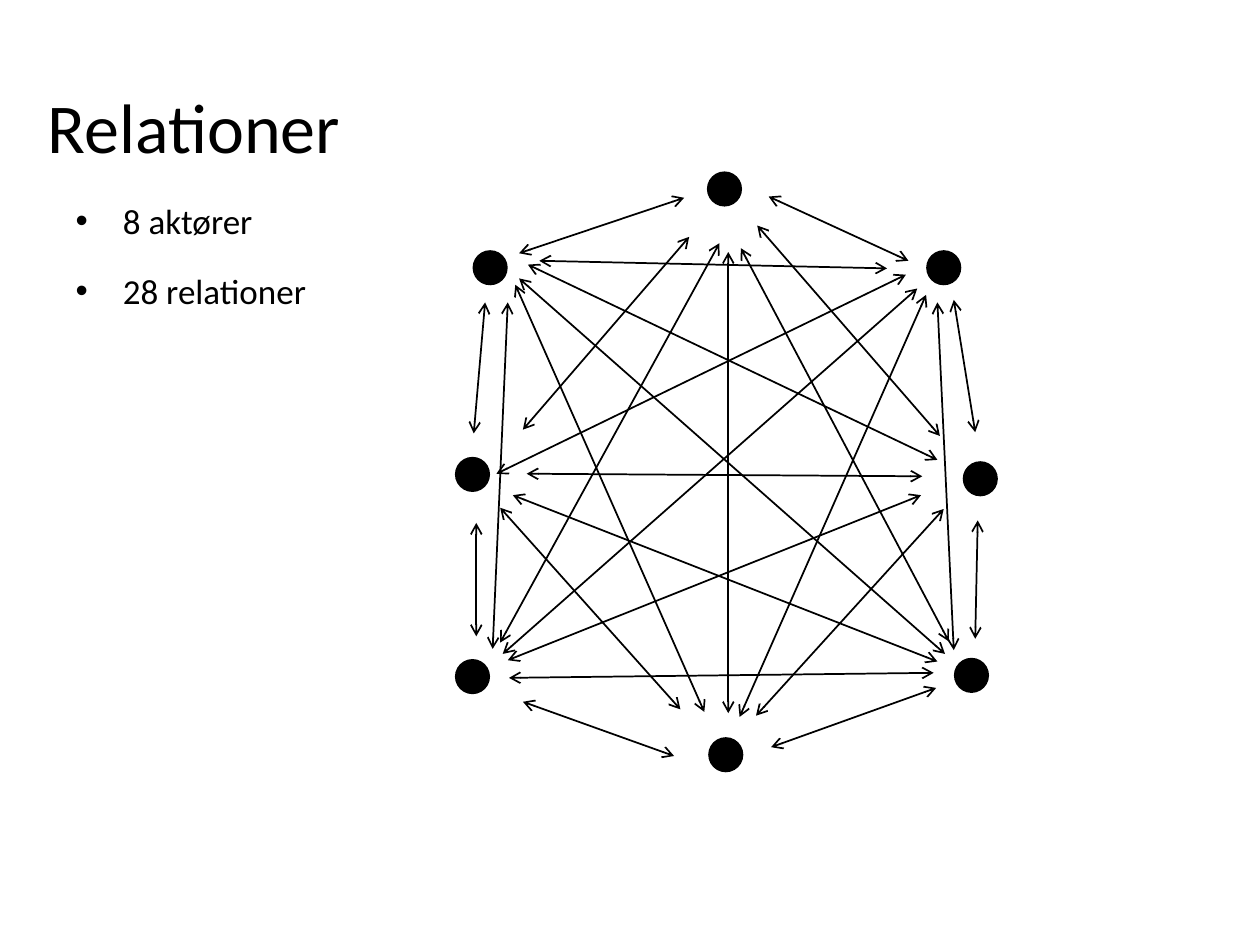
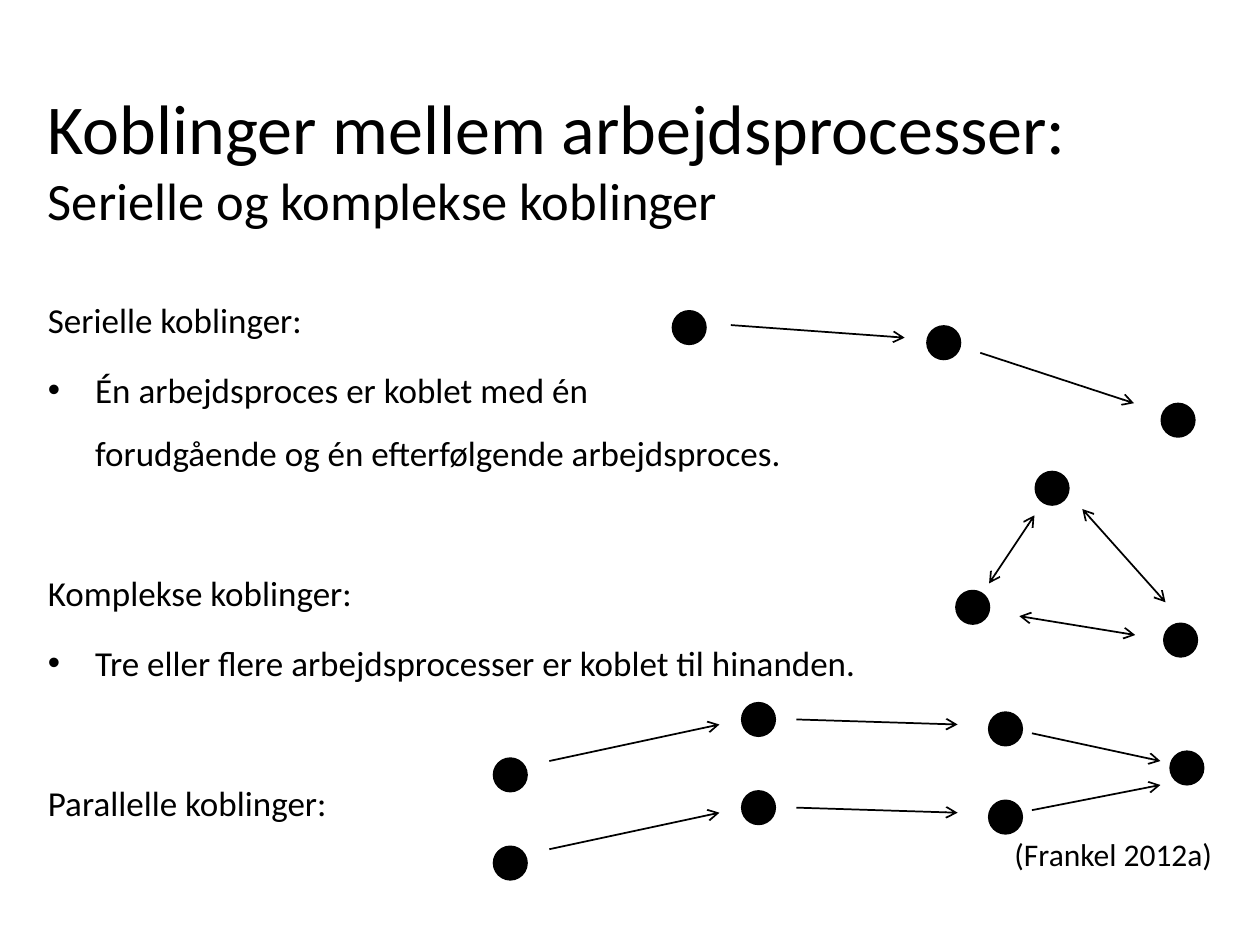
"""Builds two slides on relations between actors and couplings between work processes."""
from copy import deepcopy
from dataclasses import dataclass

from pptx import Presentation
from pptx.dml.color import RGBColor
from pptx.enum.shapes import MSO_AUTO_SHAPE_TYPE as ShapeType, MSO_CONNECTOR as ConnectorType
from pptx.enum.text import MSO_ANCHOR as Anchor, MSO_AUTO_SIZE as AutoSize, PP_ALIGN as Align
from pptx.oxml.ns import qn
from pptx.oxml.xmlchemy import OxmlElement
from pptx.util import Emu, Inches, Pt

COLUMNS, ROWS = 100, 75
WIDTH, HEIGHT = Inches(10), Inches(7.5)
INK = "000000"
FONT = "Calibri"
DOT = 2.65
LINE_WIDTH = Pt(1)
BULLET_INDENT = 3.75
PARAGRAPH_GAP = 4
SECTION_GAP = 44
TEXT_LEFT = 2.8
TRACK_GAP = 7

Point = tuple[float, float]


@dataclass(frozen=True)
class Arrow:
    start: Point
    end: Point
    both_ways: bool = True


@dataclass(frozen=True)
class Network:
    dots: list[Point]
    arrows: list[Arrow]


@dataclass(frozen=True)
class Entry:
    text: str
    bullet: bool = False
    gap: float = PARAGRAPH_GAP


@dataclass(frozen=True)
class Box:
    left: float
    top: float
    width: float
    height: float


def column(value: float) -> Emu:
    return Emu(round(WIDTH * value / COLUMNS))


def row(value: float) -> Emu:
    return Emu(round(HEIGHT * value / ROWS))


def color(hex_code: str) -> RGBColor:
    return RGBColor.from_string(hex_code)


def lower(point: Point) -> Point:
    return point[0], point[1] + TRACK_GAP


def one_way(start: Point, end: Point) -> Arrow:
    return Arrow(start, end, both_ways=False)


def place(shape, box: Box) -> None:
    shape.left, shape.top = column(box.left), row(box.top)
    shape.width, shape.height = column(box.width), row(box.height)


def prepare_frame(frame) -> None:
    frame.word_wrap = True
    frame.auto_size = AutoSize.NONE
    frame.vertical_anchor = Anchor.TOP


def write(paragraph, text: str, *, sizes: tuple[int, ...] = (20,), align=Align.LEFT,
          spacing: float = 1.0, gap: float = 0, bullet: bool = False) -> None:
    paragraph.alignment = align
    paragraph.line_spacing = spacing
    paragraph.space_before = Pt(gap)
    properties = paragraph._p.get_or_add_pPr()
    indent = column(BULLET_INDENT) if bullet else 0
    properties.set("marL", str(indent))
    properties.set("indent", str(-indent))
    mark = OxmlElement("a:buChar" if bullet else "a:buNone")
    if bullet:
        mark.set("char", "•")
    properties.append(mark)
    for index, line in enumerate(text.split("\n")):
        if index:
            paragraph.add_line_break()
            line_break = paragraph._p.findall(qn("a:br"))[-1]
            line_break.insert(0, deepcopy(run._r.get_or_add_rPr()))
        run = paragraph.add_run()
        run.text = line
        run.font.name = FONT
        run.font.size = Pt(sizes[min(index, len(sizes) - 1)])
        run.font.color.rgb = color(INK)


def add_text_slide(presentation, title: str, title_box: Box, entries: list[Entry], body_box: Box):
    slide = presentation.slides.add_slide(presentation.slide_layouts[1])
    heading, body = slide.shapes.title, slide.placeholders[1]
    for shape, box in ((heading, title_box), (body, body_box)):
        place(shape, box)
        prepare_frame(shape.text_frame)
    write(heading.text_frame.paragraphs[0], title, sizes=(40, 30))
    frame = body.text_frame
    for index, entry in enumerate(entries):
        paragraph = frame.add_paragraph() if index else frame.paragraphs[0]
        write(paragraph, entry.text, spacing=1.5, gap=entry.gap, bullet=entry.bullet)
    return slide


def add_caption(slide, text: str, box: Box) -> None:
    shape = slide.shapes.add_textbox(0, 0, 0, 0)
    place(shape, box)
    prepare_frame(shape.text_frame)
    write(shape.text_frame.paragraphs[0], text, sizes=(18,), align=Align.RIGHT)


def add_dot(shapes, center: Point) -> None:
    dot = shapes.add_shape(ShapeType.FLOWCHART_CONNECTOR, column(center[0] - DOT / 2),
                           row(center[1] - DOT / 2), column(DOT), row(DOT))
    dot.shadow.inherit = False
    dot.fill.solid()
    dot.fill.fore_color.rgb = color(INK)
    dot.line.color.rgb = color(INK)
    dot.line.width = LINE_WIDTH


def add_arrow(shapes, arrow: Arrow) -> None:
    connector = shapes.add_connector(ConnectorType.STRAIGHT, column(arrow.start[0]), row(arrow.start[1]),
                                     column(arrow.end[0]), row(arrow.end[1]))
    connector.line.color.rgb = color(INK)
    connector.line.width = LINE_WIDTH
    for tag in ("a:headEnd", "a:tailEnd") if arrow.both_ways else ("a:tailEnd",):
        tip = OxmlElement(tag)
        tip.set("type", "arrow")
        connector.line._get_or_add_ln().append(tip)
    connector._element.spPr.append(OxmlElement("a:effectLst"))


def add_network(slide, network: Network) -> None:
    shapes = slide.shapes.add_group_shape().shapes
    for center in network.dots:
        add_dot(shapes, center)
    for arrow in network.arrows:
        add_arrow(shapes, arrow)


ACTORS = Network(
    dots=[(57.5, 15), (74.9, 21.25), (77.8, 38), (77.1, 53.6),
          (57.6, 59.9), (37.5, 53.7), (37.5, 37.65), (38.9, 21.25)],
    arrows=[
        Arrow((41.8, 37.6), (73.2, 37.8)), Arrow((41.5, 34.1), (54.7, 18.8)),
        Arrow((60.1, 17.9), (74.6, 34.6)), Arrow((39.7, 40.3), (54, 56.3)),
        Arrow((74.9, 40.4), (60, 56.8)), Arrow((37.8, 41.5), (37.8, 50.5)),
        Arrow((53.5, 60), (41.5, 55.7)), Arrow((39.7, 51), (57.1, 19.3)),
        Arrow((40.3, 52.4), (73.1, 39.3)), Arrow((77.6, 41.3), (77.4, 50.7)),
        Arrow((74.3, 54.6), (61.2, 59.3)), Arrow((74.4, 52.5), (40.7, 39.3)),
        Arrow((75.3, 50.9), (58.8, 19.7)), Arrow((38.5, 24), (37.6, 34.4)),
        Arrow((41.2, 20.1), (54.3, 15.7)), Arrow((40.3, 24), (39.1, 51.5)),
        Arrow((40.9, 22.6), (55.9, 56.5)), Arrow((41.2, 22.1), (75, 51.9)),
        Arrow((41.9, 21), (74.4, 36.5)), Arrow((40.4, 53.8), (74.1, 53.4)),
        Arrow((57.8, 20), (57.8, 56.6)), Arrow((61, 15.6), (72.1, 20.7)),
        Arrow((75.7, 23.8), (77.4, 34.3)), Arrow((73.5, 23.4), (58.7, 56.9)),
        Arrow((72.8, 22.9), (39.9, 51.9)), Arrow((71.9, 21.8), (39.4, 37.6)),
        Arrow((74.4, 24), (75.7, 51.6)), Arrow((70.4, 21.3), (42.8, 20.7)),
    ],
)

SERIAL = Network(
    dots=[(54.7, 26), (74.9, 27.2), (93.5, 33.35)],
    arrows=[one_way((58, 25.8), (71.8, 26.8)), one_way((77.8, 28), (90, 32))],
)

COMPLEX = Network(
    dots=[(77.2, 48.2), (93.7, 50.8), (83.5, 38.75)],
    arrows=[Arrow((90.1, 50.4), (80.9, 48.9)), Arrow((92.5, 47.8), (85.9, 40.4)),
            Arrow((78.5, 46.3), (82.1, 40.9))],
)

TRACK_DOTS = [(40.5, 61.5), (60.2, 57.1), (79.8, 57.85)]
TRACK_ARROWS = [one_way((43.6, 60.4), (57.1, 57.5)), one_way((63.2, 57.1), (76, 57.5))]
PARALLEL = Network(
    dots=TRACK_DOTS + [lower(dot) for dot in TRACK_DOTS] + [(94.2, 60.95)],
    arrows=TRACK_ARROWS + [one_way(lower(arrow.start), lower(arrow.end)) for arrow in TRACK_ARROWS]
    + [one_way((81.9, 58.2), (92.1, 60.4)), one_way((81.9, 64.3), (92.1, 62.3))],
)


def main() -> None:
    presentation = Presentation()
    presentation.slide_width, presentation.slide_height = WIDTH, HEIGHT

    relations = add_text_slide(
        presentation, "Relationer", Box(TEXT_LEFT, 6.1, 94.5, 7.8),
        [Entry("8 aktører", bullet=True), Entry("28 relationer", bullet=True)],
        Box(5, 13.7, 92.2, 58.4))
    add_network(relations, ACTORS)

    couplings = add_text_slide(
        presentation, "Koblinger mellem arbejdsprocesser:\nSerielle og komplekse koblinger",
        Box(TEXT_LEFT, 6.2, 94.1, 15.4),
        [Entry("Serielle koblinger:"),
         Entry("Én arbejdsproces er koblet med én\nforudgående og én efterfølgende arbejdsproces.",
               bullet=True),
         Entry("Komplekse koblinger:", gap=SECTION_GAP),
         Entry("Tre eller flere arbejdsprocesser er koblet til hinanden.", bullet=True),
         Entry("Parallelle koblinger:", gap=SECTION_GAP)],
        Box(TEXT_LEFT, 21.5, 94.1, 15.9))
    for network in (SERIAL, COMPLEX, PARALLEL):
        add_network(couplings, network)
    add_caption(couplings, "(Frankel 2012a)", Box(74.9, 65.8, 22.3, 4.7))

    presentation.save("out.pptx")


if __name__ == "__main__":
    main()
